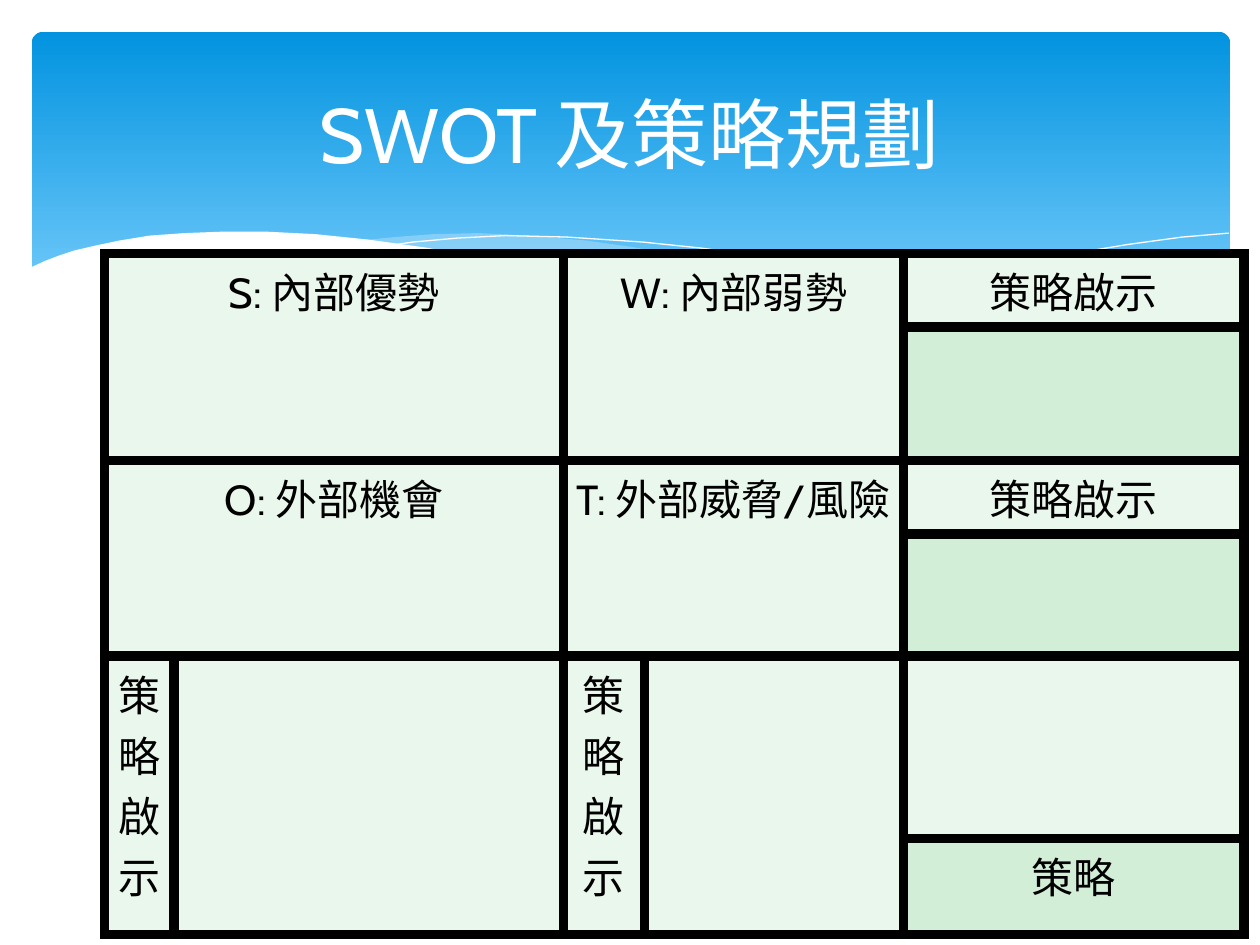
from lxml.etree import SubElement
from pptx import Presentation
from pptx.dml.color import RGBColor
from pptx.enum.shapes import MSO_SHAPE
from pptx.enum.text import MSO_ANCHOR, PP_ALIGN
from pptx.oxml.ns import qn
from pptx.util import Cm, Pt

COLORS = {
    "white": "FFFFFF", "black": "000000", "wave": "C6E7FC",
    "banner_top": "0293E0", "banner_bottom": "83D3FE",
    "pale": "EAF7EC", "green": "D2EED6",
}
TITLE = "SWOT 及策略規劃"
INSIGHT = "策略啟示"

# Curve points in centimetres
RIGHT_WAVE = [
    (24.77, 5.08), (23.75, 5.26), (22.63, 5.49), (21.13, 5.84), (19.13, 6.3),
    (16.79, 6.73), (17.91, 6.88), (19.23, 7.01), (20.4, 7.06), (21.69, 7.01),
    (22.78, 6.86), (23.75, 6.65), (24.77, 6.27)]
MIDDLE_WAVE = [
    (22.68, 6.93), (20.5, 6.6), (17.93, 6.1), (15.98, 5.64), (14.83, 5.36),
    (13.74, 5.16), (12.75, 4.98), (11.81, 4.85), (10.67, 4.75), (9.65, 4.7),
    (8.74, 4.72), (7.95, 4.78), (7.26, 4.85), (8.69, 5.05), (10.26, 5.36),
    (12.47, 5.89), (14.38, 6.3), (16.51, 6.71), (18.69, 6.99), (20.5, 7.06)]
FALLING_LINE = [
    (7.85, 4.95), (8.33, 4.88), (9.22, 4.8), (10.19, 4.75), (11.43, 4.78),
    (12.95, 4.88), (14.12, 5), (15.44, 5.18), (16.89, 5.41), (18.47, 5.74),
    (20.19, 6.12), (23.04, 6.91)]
RISING_LINE = [
    (15.57, 6.53), (17.07, 6.12), (19, 5.66), (21.23, 5.18), (22.73, 4.93),
    (23.83, 4.78), (24.77, 4.7)]
WHITE_WAVE = [
    (24.82, 6.25), (24.13, 6.5), (23.11, 6.78), (21.92, 6.96), (20.55, 7.04),
    (18.9, 6.96), (16.97, 6.73), (15.32, 6.45), (13.44, 6.07), (11.35, 5.59),
    (9.93, 5.26), (8.64, 5), (7.42, 4.83), (6.35, 4.72), (5.36, 4.67),
    (4.5, 4.67), (3.71, 4.7), (3.02, 4.75), (2.41, 4.85), (1.93, 4.95),
    (1.5, 5.05), (1.17, 5.16), (0.91, 5.26), (0.58, 5.41), (0.58, 8.36),
    (24.82, 8.36)]

COLUMN_WIDTHS = [1.4, 7.85, 1.63, 5.23, 6.86]
ROW_HEIGHTS = [1.22, 2.69, 1.42, 2.46, 3.68, 1.93]
# row, column, row span, column span, wording, fill
SWOT_CELLS = [
    (0, 0, 2, 2, "S: 內部優勢", "pale"),
    (0, 2, 2, 2, "W: 內部弱勢", "pale"),
    (0, 4, 1, 1, INSIGHT, "pale"),
    (1, 4, 1, 1, "", "green"),
    (2, 0, 2, 2, "O: 外部機會", "pale"),
    (2, 2, 2, 2, "T: 外部威脅/風險", "pale"),
    (2, 4, 1, 1, INSIGHT, "pale"),
    (3, 4, 1, 1, "", "green"),
    (4, 0, 2, 1, INSIGHT, "pale"),
    (4, 1, 2, 1, "", "pale"),
    (4, 2, 2, 1, INSIGHT, "pale"),
    (4, 3, 2, 1, "", "pale"),
    (4, 4, 1, 1, "", "pale"),
    (5, 4, 1, 1, "策略", "green"),
]


def rgb(color):
    return RGBColor.from_string(COLORS[color])


class SlideMaker:
    """Holds the style and the current slide."""

    font = "Cabin"
    border = Pt(6)

    def __init__(self, slide):
        self.slide = slide

    def centred_text(self, frame, wording, size, color):
        paragraph = frame.paragraphs[0]
        paragraph.alignment = PP_ALIGN.CENTER
        run = paragraph.add_run()
        run.text = wording
        formats = {"name": self.font, "size": Pt(size), "bold": False}
        for attribute, value in formats.items():
            setattr(run.font, attribute, value)
        run.font.color.rgb = rgb(color)

    def title(self, wording, left, top, width, height):
        heading = self.slide.shapes.title
        place = {"left": left, "top": top, "width": width, "height": height}
        for attribute, value in place.items():
            setattr(heading, attribute, Cm(value))
        heading.text_frame.vertical_anchor = MSO_ANCHOR.MIDDLE
        self.centred_text(heading.text_frame, wording, 44, "white")
        # Bring the title in front of the banner
        self.slide.shapes._spTree.append(heading._element)

    def banner(self, left, top, width, height):
        banner = self.slide.shapes.add_shape(
            MSO_SHAPE.ROUNDED_RECTANGLE, Cm(left), Cm(top), Cm(width), Cm(height))
        banner.adjustments[0] = 0.034
        banner.shadow.inherit = False
        banner.line.fill.background()
        banner.fill.gradient()
        banner.fill.gradient_angle = 270
        stops = [(0, "banner_top"), (0.9, "banner_bottom")]
        for stop, (position, color) in zip(banner.fill.gradient_stops, stops):
            stop.position = position
            stop.color.rgb = rgb(color)

    def curve(self, points, close):
        start, *rest = [(Cm(x), Cm(y)) for x, y in points]
        builder = self.slide.shapes.build_freeform(*start)
        builder.add_line_segments(rest, close=close)
        outline = builder.convert_to_shape()
        outline.shadow.inherit = False
        return outline

    def wave(self, points, color, opacity=100):
        wave = self.curve(points, close=True)
        wave.line.fill.background()
        wave.fill.solid()
        wave.fill.fore_color.rgb = rgb(color)
        if opacity < 100:
            tint = wave._element.spPr.find(qn("a:solidFill"))[0]
            SubElement(tint, qn("a:alpha"), val=str(opacity * 1000))

    def wave_line(self, points):
        line = self.curve(points, close=False)
        line.fill.background()
        line.line.color.rgb = rgb("white")
        line.line.width = Pt(0)

    def cell_borders(self, cell):
        properties = cell._tc.get_or_add_tcPr()
        for index, side in enumerate(("lnL", "lnR", "lnT", "lnB")):
            edge = properties.makeelement(qn(f"a:{side}"), {"w": str(self.border)})
            paint = SubElement(edge, qn("a:solidFill"))
            SubElement(paint, qn("a:srgbClr"), val=COLORS["black"])
            properties.insert(index, edge)

    def table(self, left, top, widths, heights, cells):
        grid = self.slide.shapes.add_table(
            len(heights), len(widths), Cm(left), Cm(top),
            Cm(sum(widths)), Cm(sum(heights))).table
        grid.first_row = grid.horz_banding = False
        for column, width in zip(grid.columns, widths):
            column.width = Cm(width)
        for row, height in zip(grid.rows, heights):
            row.height = Cm(height)
        for cell in grid.iter_cells():
            self.cell_borders(cell)
        for row, column, row_span, column_span, wording, color in cells:
            cell = grid.cell(row, column)
            if row_span * column_span > 1:
                cell.merge(grid.cell(row + row_span - 1, column + column_span - 1))
            cell.fill.solid()
            cell.fill.fore_color.rgb = rgb(color)
            if wording:
                self.centred_text(cell.text_frame, wording, 24, "black")


def main():
    presentation = Presentation()
    presentation.slide_width, presentation.slide_height = Cm(25.4), Cm(19.05)
    title_only = presentation.slide_layouts[5]
    maker = SlideMaker(presentation.slides.add_slide(title_only))

    maker.banner(0.64, 0.64, 24.16, 6.86)
    maker.wave(RIGHT_WAVE, "wave", 29)
    maker.wave(MIDDLE_WAVE, "wave", 40)
    maker.wave_line(FALLING_LINE)
    maker.wave_line(RISING_LINE)
    maker.wave(WHITE_WAVE, "white")
    maker.table(2.11, 5.11, COLUMN_WIDTHS, ROW_HEIGHTS, SWOT_CELLS)
    maker.title(TITLE, 1.27, 0.94, 22.86, 3.48)

    presentation.save("out.pptx")


if __name__ == "__main__":
    main()
